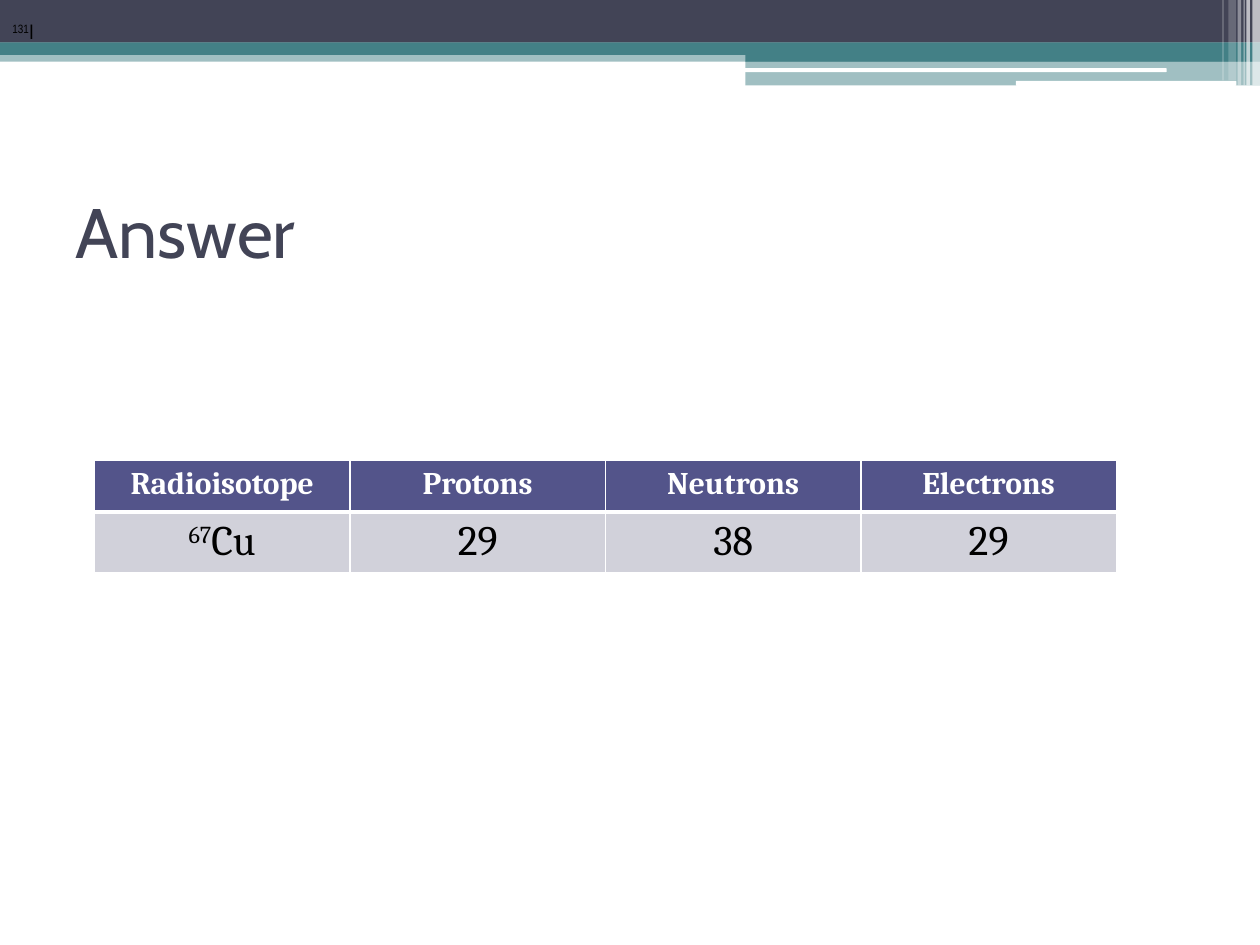
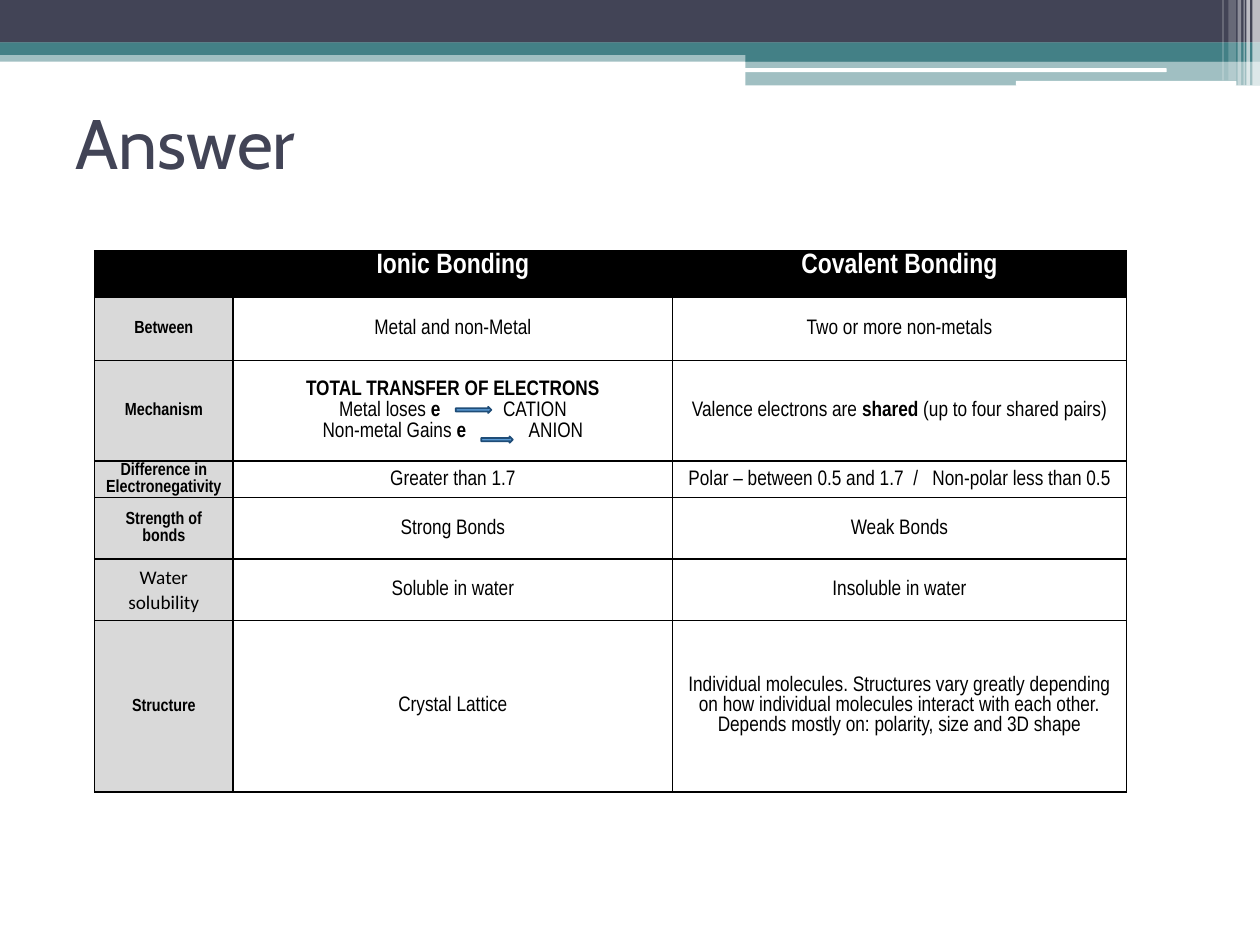
from dataclasses import dataclass
from typing import NamedTuple

from lxml.etree import SubElement
from pptx import Presentation
from pptx.dml.color import RGBColor
from pptx.enum.shapes import MSO_SHAPE
from pptx.enum.text import MSO_ANCHOR, PP_ALIGN
from pptx.oxml import parse_xml
from pptx.oxml.ns import nsdecls, qn
from pptx.util import Pt

SLATE, TEAL, WHITE, BLACK = "424456", "438086", "FFFFFF", "000000"
INDIGO, LAVENDER, LABEL_GRAY = "53548A", "D1D1DA", "D9D9D9"
ARROW_BLUE, ARROW_EDGE = "5B9BD5", "1F4D78"
NARROW = "Arial Narrow"
RECT, ROUND = MSO_SHAPE.RECTANGLE, MSO_SHAPE.ROUNDED_RECTANGLE


class Run(NamedTuple):
    text: str
    bold: bool | None = None
    raised: bool = False
    gap: float = 0  # extra points after each character


class Band(NamedTuple):
    left: float
    top: float
    width: float
    height: float
    color: str
    opacity: int = 100
    preset: MSO_SHAPE = RECT


@dataclass(frozen=True)
class CellLook:
    fill: str | None = None
    font: str = NARROW
    size: float = 12
    color: str = BLACK
    bold: bool = False
    anchor: MSO_ANCHOR = MSO_ANCHOR.MIDDLE
    insets: tuple[float, float] = (5, 0)
    spacing: float | None = 1.07
    edge: str = BLACK
    top_edge: float = 1
    bottom_edge: float = 1


BANDS = [
    Band(0, 28.8, 720, 6.5, TEAL, 50),
    Band(0, 0, 720, 24.4, SLATE),
    Band(0, 24.2, 720, 7.2, TEAL),
    Band(426, 28, 294, 7.2, TEAL),
    Band(426, 34.8, 294, 14, TEAL, 50),
    Band(425.5, 39, 241.2, 2.2, WHITE, preset=ROUND),
    Band(580.5, 46.2, 126, 2.8, WHITE, preset=ROUND),
    # Light stripes at the right edge
    Band(715.7, 0, 4.3, 48.8, WHITE, 65),
    Band(712.2, 0, 2, 48.8, WHITE, 65),
    Band(710.6, 0, 0.7, 48.8, WHITE, 60),
    Band(707.2, 0, 2, 48.8, WHITE, 40),
    Band(702, 0, 4.3, 46, WHITE, 20),
    Band(698.5, 0, 0.7, 46, WHITE, 30),
]


def rgb(color: str) -> RGBColor:
    return RGBColor.from_string(color)


def write(frame, paragraphs, *, font: str, size: float, color: str,
          bold: bool = False, align=PP_ALIGN.LEFT, spacing=None,
          anchor=MSO_ANCHOR.MIDDLE) -> None:
    """Write one string, or a list of paragraphs that are lists of runs."""
    if isinstance(paragraphs, str):
        paragraphs = [[Run(paragraphs)]]
    frame.word_wrap = True
    frame.vertical_anchor = anchor
    for index, runs in enumerate(paragraphs):
        paragraph = frame.add_paragraph() if index else frame.paragraphs[0]
        paragraph.alignment = align
        if spacing:
            paragraph.line_spacing = spacing
        for part in runs:
            run = paragraph.add_run()
            run.text = part.text
            run.font.name, run.font.size = font, Pt(size)
            run.font.bold = bold if part.bold is None else part.bold
            run.font.color.rgb = rgb(color)
            properties = run._r.get_or_add_rPr()
            if part.raised:
                properties.set("baseline", "30000")
            if part.gap:
                properties.set("spc", str(round(part.gap * 100)))


def add_preset(slide, preset, left, top, width, height, color, opacity=100):
    shape = slide.shapes.add_shape(preset, Pt(left), Pt(top), Pt(width), Pt(height))
    shape.shadow.inherit = False
    shape.fill.solid()
    shape.fill.fore_color.rgb = rgb(color)
    shape.line.fill.background()
    if opacity < 100:
        fill_color = next(shape._element.spPr.iter(qn("a:srgbClr")))
        SubElement(fill_color, qn("a:alpha")).set("val", str(opacity * 1000))
    return shape


def add_answer_slide(deck, title_top: float):
    """Add a slide with the shared bands and the title."""
    slide = deck.slides.add_slide(deck.slide_layouts[5])
    for band in BANDS:
        add_preset(slide, band.preset, band.left, band.top, band.width,
                   band.height, band.color, band.opacity)
    title = slide.shapes.title
    title.left, title.top, title.width, title.height = Pt(36), Pt(title_top), Pt(648), Pt(84)
    write(title.text_frame, "Answer", font="Cabin", size=40, color=SLATE)
    return slide


def style_cell(cell, content, look: CellLook) -> None:
    cell.margin_left = cell.margin_right = Pt(look.insets[0])
    cell.margin_top = cell.margin_bottom = Pt(look.insets[1])
    if content:
        write(cell.text_frame, content, font=look.font, size=look.size,
              color=look.color, bold=look.bold, align=PP_ALIGN.CENTER,
              spacing=look.spacing)
    cell.vertical_anchor = look.anchor
    if look.fill:
        cell.fill.solid()
        cell.fill.fore_color.rgb = rgb(look.fill)
    else:
        cell.fill.background()
    edges = {"L": 1, "R": 1, "T": look.top_edge, "B": look.bottom_edge}
    for position, (side, width) in enumerate(edges.items()):
        cell._tc.get_or_add_tcPr().insert(position, parse_xml(
            f'<a:ln{side} {nsdecls("a")} w="{Pt(width)}"><a:solidFill>'
            f'<a:srgbClr val="{look.edge}"/></a:solidFill></a:ln{side}>'))


def add_grid(slide, left, top, widths, heights, rows) -> None:
    """Add a table; each row is a list of (content, look) pairs."""
    table = slide.shapes.add_table(len(heights), len(widths), Pt(left), Pt(top),
                                   Pt(sum(widths)), Pt(sum(heights))).table
    table.first_row = table.horz_banding = False
    for column, width in zip(table.columns, widths):
        column.width = Pt(width)
    for row, height, entries in zip(table.rows, heights, rows):
        row.height = Pt(height)
        for cell, (content, look) in zip(row.cells, entries):
            style_cell(cell, content, look)


def build_isotope_slide(deck) -> None:
    slide = add_answer_slide(deck, title_top=90)
    shared = dict(font="Cambria", anchor=MSO_ANCHOR.TOP, insets=(7.2, 3.6),
                  spacing=None, edge=WHITE)
    heading = CellLook(fill=INDIGO, size=18, color=WHITE, bold=True,
                       bottom_edge=3, **shared)
    value = CellLook(fill=LAVENDER, size=24, top_edge=3, **shared)
    headings = ["Radioisotope", "Protons", "Neutrons", "Electrons"]
    copper = [[Run("67", raised=True), Run("Cu")]]
    add_grid(slide, 54, 263, [146] * 4, [29.5, 34], [
        [(text, heading) for text in headings],
        [(content, value) for content in (copper, "29", "38", "29")],
    ])
    # Isotope mark in the top band
    iodine = slide.shapes.add_textbox(Pt(0), Pt(0), Pt(720), Pt(36))
    write(iodine.text_frame, [[Run("131", raised=True), Run("I")]],
          font=NARROW, size=12, color=BLACK)


def build_bonding_slide(deck) -> None:
    slide = add_answer_slide(deck, title_top=39)
    heading = CellLook(fill=BLACK, size=16, color=WHITE, bold=True,
                       anchor=MSO_ANCHOR.TOP)
    label = CellLook(fill=LABEL_GRAY, size=10, bold=True)
    plain_label = CellLook(fill=LABEL_GRAY, font="Calibri", size=11)
    body = CellLook()
    single = CellLook(spacing=None)

    # The wide space leaves room for an arrow
    electron = [Run("e", bold=True), Run(" ", gap=33)]
    transfer = [
        [Run("TOTAL TRANSFER OF ELECTRONS", bold=True)],
        [Run("Metal loses "), *electron, Run("CATION")],
        [Run("Non-metal Gains "), *electron, Run("ANION")],
    ]
    sharing = [[Run("Valence electrons are "), Run("shared", bold=True),
                Run(" (up to four shared pairs)")]]
    polarity = [[Run("Polar – between 0.5 and 1.7"), Run(" ", gap=2.7), Run("/"),
                 Run(" ", gap=5.4), Run("Non-polar less than 0.5")]]
    molecules = ("Individual molecules. Structures vary greatly depending on how "
                 "individual molecules interact with each other. Depends mostly "
                 "on: polarity, size and 3D shape")
    comparison = [
        ("Between", label, "Metal and non-Metal", "Two or more non-metals", body),
        ("Mechanism", label, transfer, sharing, body),
        ("Difference in Electronegativity", label, "Greater than 1.7", polarity, body),
        ("Strength of bonds", label, "Strong Bonds", "Weak Bonds", body),
        ("Water solubility", plain_label, "Soluble in water", "Insoluble in water", body),
        ("Structure", label, "Crystal Lattice", molecules, single),
    ]
    rows = [[(text, heading) for text in ("", "Ionic Bonding", "Covalent Bonding")]]
    rows += [[(aspect, aspect_look), (ionic, look), (covalent, look)]
             for aspect, aspect_look, ionic, covalent, look in comparison]
    add_grid(slide, 54, 143.5, [79.2, 251.2, 259.2],
             [26.4, 36, 57.5, 20.8, 35.2, 35.2, 98], rows)

    # Arrows from electron to ion
    for left, top, width in ((275, 249.4, 18), (260.4, 232.4, 20.4)):
        arrow = add_preset(slide, MSO_SHAPE.RIGHT_ARROW, left, top, width, 3.6, ARROW_BLUE)
        arrow.line.color.rgb = rgb(ARROW_EDGE)
        arrow.line.width = Pt(1)


def main() -> None:
    deck = Presentation()
    deck.slide_width, deck.slide_height = Pt(720), Pt(540)
    build_isotope_slide(deck)
    build_bonding_slide(deck)
    deck.save("out.pptx")


if __name__ == "__main__":
    main()
